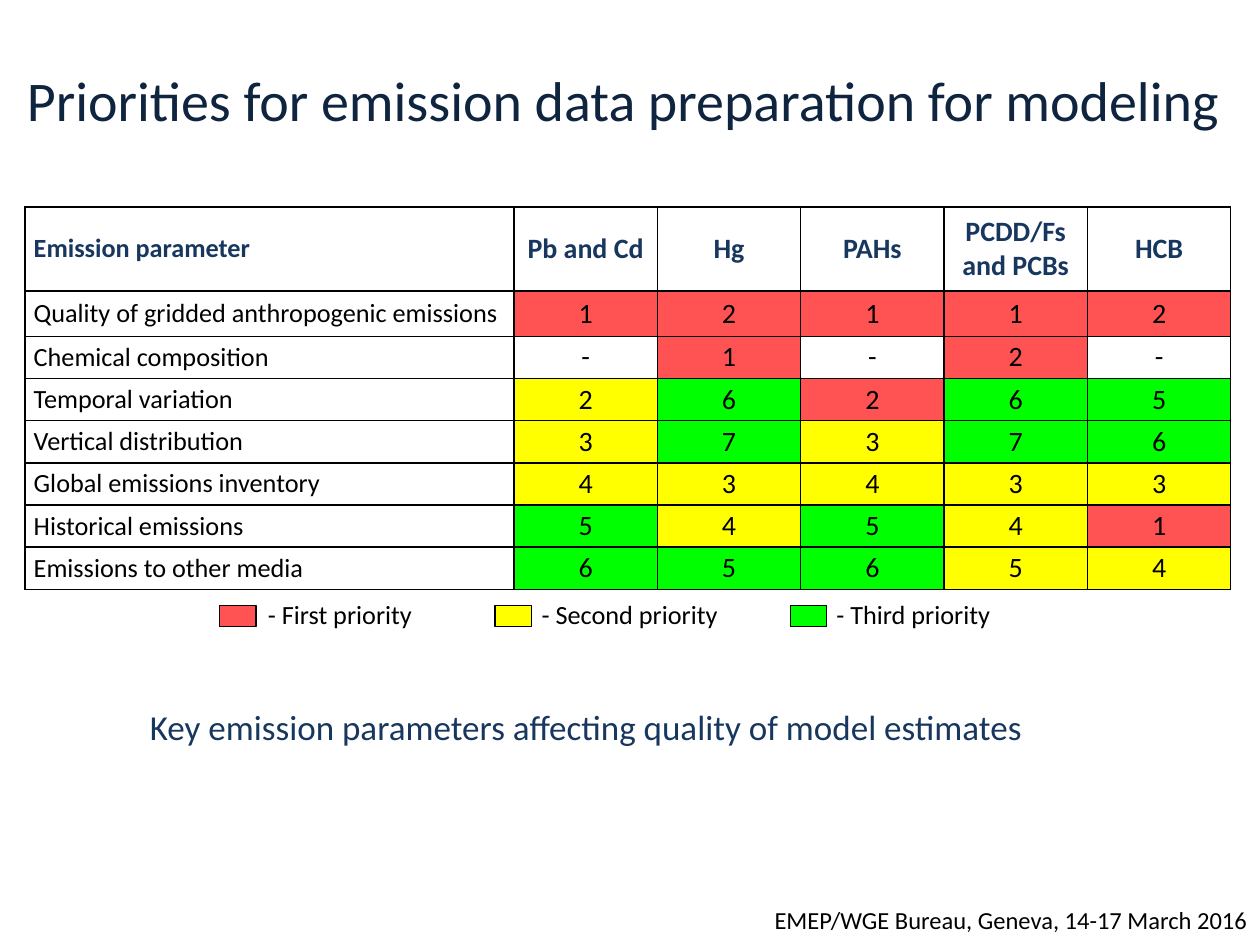
from lxml.etree import SubElement
from pptx import Presentation
from pptx.dml.color import RGBColor
from pptx.enum.shapes import MSO_SHAPE as Shape
from pptx.enum.text import MSO_ANCHOR as Anchor, MSO_AUTO_SIZE as AutoSize, PP_ALIGN as Align
from pptx.oxml import parse_xml
from pptx.oxml.ns import nsdecls, qn
from pptx.util import Cm, Pt

BLACK = RGBColor(0x00, 0x00, 0x00)
NAVY = RGBColor(0x17, 0x37, 0x5E)
DARK_NAVY = RGBColor(0x0F, 0x24, 0x3E)
RED = RGBColor(0xFF, 0x53, 0x53)
YELLOW = RGBColor(0xFF, 0xFF, 0x00)
GREEN = RGBColor(0x00, 0xFF, 0x00)
PRIORITY = {"R": RED, "Y": YELLOW, "G": GREEN}


def write(frame, text, size=15, color=BLACK, bold=False, align=Align.LEFT, after=0):
    para = frame.paragraphs[0]
    para.alignment = align
    para.space_after = Pt(after)
    span = para.add_run()
    span.text = text
    span.font.name = "Calibri"
    span.font.size = Pt(size)
    span.font.bold = bold
    span.font.color.rgb = color
    return para


def set_borders(cell, sides):
    properties = cell._tc.get_or_add_tcPr()
    for position, side in enumerate("LRTB"):
        paint = '<a:solidFill><a:srgbClr val="000000"/></a:solidFill>' if side in sides else "<a:noFill/>"
        line = parse_xml(f'<a:ln{side} {nsdecls("a")} w="12700">{paint}</a:ln{side}>')
        properties.insert(position, line)


deck = Presentation()
deck.slide_width, deck.slide_height = Cm(25.4), Cm(19.05)
slide = deck.slides.add_slide(deck.slide_layouts[6])

# Title, caption and footer
for text, left, top, width, height, style in (
    ("Priorities for emission data preparation for modeling ", 0, 1.19, 25.4, 1.63,
     dict(size=32, color=DARK_NAVY, align=Align.CENTER)),
    ("Key emission parameters affecting quality of model estimates", 2.77, 14.1, 21.44, 1.12,
     dict(size=20, color=NAVY)),
    ("EMEP/WGE Bureau, Geneva, 14-17 March 2016", 12.29, 18.11, 13.11, 0.86,
     dict(size=14, align=Align.RIGHT)),
):
    box = slide.shapes.add_textbox(Cm(left), Cm(top), Cm(width), Cm(height))
    box.text_frame.word_wrap = True
    box.text_frame.auto_size = AutoSize.SHAPE_TO_FIT_TEXT
    write(box.text_frame, text, **style)

# Priority table: each score is a rank followed by its priority colour
headings = ["Emission parameter", "Pb and Cd", "Hg", "PAHs", "PCDD/Fs and PCBs", "HCB"]
parameters = {
    "Quality of gridded anthropogenic emissions": "1R 2R 1R 1R 2R",
    "Chemical composition": "- 1R - 2R -",
    "Temporal variation": "2Y 6G 2R 6G 5G",
    "Vertical distribution": "3Y 7G 3Y 7G 6G",
    "Global emissions inventory": "4Y 3Y 4Y 3Y 3Y",
    "Historical emissions": "5G 4Y 5G 4Y 1R",
    "Emissions to other media": "6G 5G 6G 5Y 4Y",
}
rows = [headings] + [[name] + scores.split() for name, scores in parameters.items()]
column_widths = [9.86] + [2.89] * 5
row_heights = [1.7, 0.91] + [0.85] * 7
table = slide.shapes.add_table(
    len(row_heights), len(column_widths), Cm(0.5), Cm(4.17),
    Cm(sum(column_widths)), Cm(sum(row_heights))).table
table.first_row = table.horz_banding = False
for column, width in zip(table.columns, column_widths):
    column.width = Cm(width)
for row, height in zip(table.rows, row_heights):
    row.height = Cm(height)
for cell in table.iter_cells():
    cell.margin_left = cell.margin_right = Cm(0.18)
    cell.margin_top = cell.margin_bottom = 0
    cell.vertical_anchor = Anchor.MIDDLE
    cell.fill.background()

for row_index, row in enumerate(rows):
    for column_index, text in enumerate(row):
        cell = table.cell(row_index, column_index)
        is_header, is_label = row_index == 0, column_index == 0
        if not is_header and not is_label and text != "-":
            cell.fill.solid()
            cell.fill.fore_color.rgb = PRIORITY[text[-1]]
            text = text[:-1]
        write(cell.text_frame, text, size=15 if is_label else 16,
              color=NAVY if is_header else BLACK, bold=is_header,
              align=Align.LEFT if is_label else Align.CENTER, after=1)
        set_borders(cell, "LRTB")

# Legend: the labels sit on tab stops in the merged last row
legend_row = len(rows)
for column_index in range(len(column_widths)):
    set_borders(table.cell(legend_row, column_index), "T")
legend = table.cell(legend_row, 0)
legend.merge(table.cell(legend_row, len(column_widths) - 1))
legend.vertical_anchor = Anchor.BOTTOM
para = write(legend.text_frame, "\t- First priority\t- Second priority\t- Third priority", after=1)
tab_list = SubElement(para._p.get_or_add_pPr(), qn("a:tabLst"))
for stop in (4.72, 10.24, 16.18):
    SubElement(tab_list, qn("a:tab"), pos=str(Cm(stop)), algn="l")

for left, color in zip((4.42, 9.98, 15.93), PRIORITY.values()):
    swatch = slide.shapes.add_shape(Shape.RECTANGLE, Cm(left), Cm(12.21), Cm(0.74), Cm(0.42))
    swatch.shadow.inherit = False
    swatch.fill.solid()
    swatch.fill.fore_color.rgb = color
    swatch.line.color.rgb = BLACK
    swatch.line.width = Pt(0.75)

deck.save("out.pptx")
